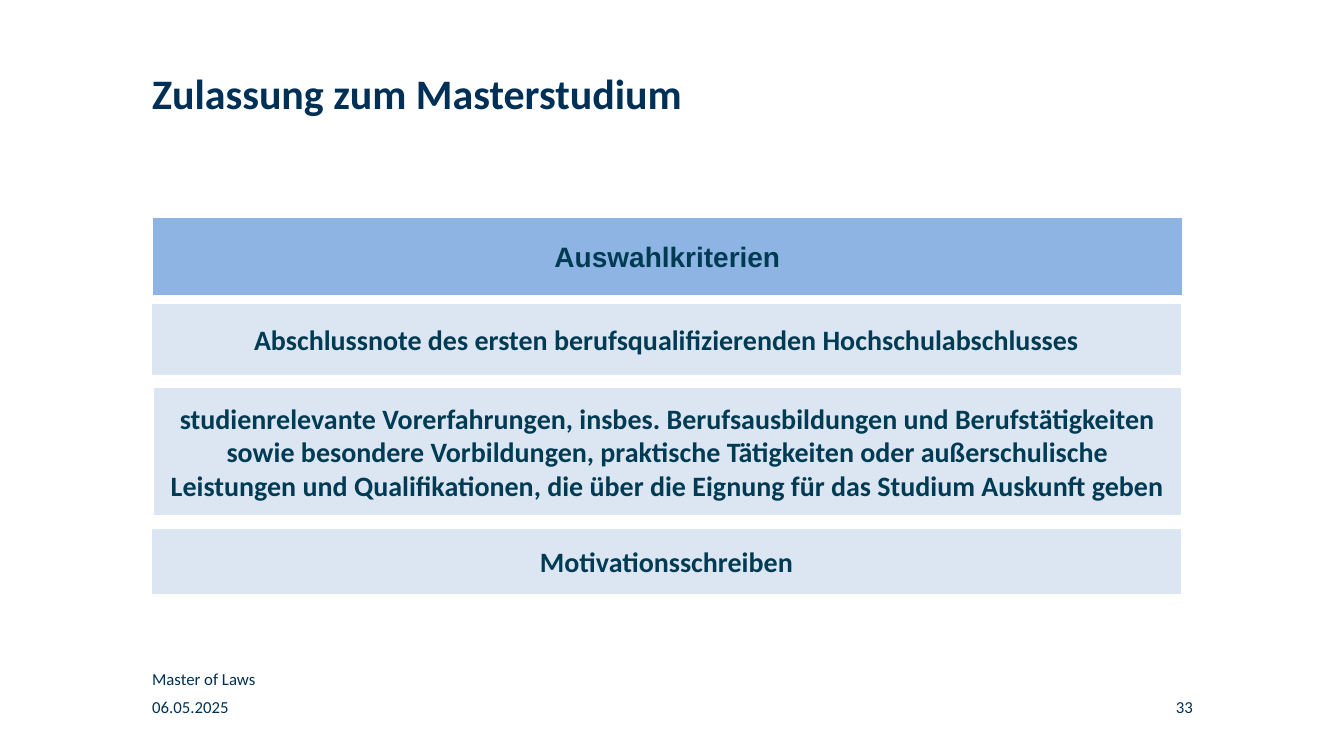
from dataclasses import dataclass

from pptx import Presentation
from pptx.dml.color import RGBColor
from pptx.enum.shapes import MSO_SHAPE
from pptx.enum.text import MSO_ANCHOR, MSO_AUTO_SIZE, PP_ALIGN
from pptx.shapes.autoshape import Shape
from pptx.slide import Slide
from pptx.util import Inches, Pt

NAVY = RGBColor(0x00, 0x30, 0x56)
PETROL = RGBColor(0x00, 0x3B, 0x53)
MID_BLUE = RGBColor(0x8E, 0xB4, 0xE3)
PALE_BLUE = RGBColor(0xDC, 0xE6, 0xF2)
WHITE = RGBColor(0xFF, 0xFF, 0xFF)

TITLE_FORMAT = {"name": "Calibri", "size": Pt(30), "bold": True}
FOOTER_FORMAT = {"name": "Calibri", "size": Pt(12), "bold": False}
BAR_FORMAT = {"name": "Calibri", "size": Pt(20), "bold": True}
HEADING_FORMAT = BAR_FORMAT | {"name": "Arial"}

PLAIN_FRAME = {
    "margin_left": 0,
    "margin_top": 0,
    "margin_right": 0,
    "margin_bottom": 0,
    "vertical_anchor": MSO_ANCHOR.TOP,
}
BAR_FRAME = {"vertical_anchor": MSO_ANCHOR.MIDDLE}


@dataclass(frozen=True)
class Box:
    left: float
    top: float
    width: float
    height: float

    def lengths(self) -> list[int]:
        return [Inches(value) for value in (self.left, self.top, self.width, self.height)]


@dataclass(frozen=True)
class FooterItem:
    text: str
    box: Box
    alignment: PP_ALIGN = PP_ALIGN.LEFT


@dataclass(frozen=True)
class Bar:
    text: str
    box: Box
    fill: RGBColor = PALE_BLUE
    is_heading: bool = False


TITLE_BOX = Box(1.51, 0.67, 7.06, 1.37)

FOOTER_ITEMS = [
    FooterItem("06.05.2025", Box(1.51, 6.91, 3.11, 0.2)),
    FooterItem("Master of Laws", Box(1.51, 6.63, 4.22, 0.2)),
    FooterItem("33", Box(10.3, 6.91, 1.54, 0.2), PP_ALIGN.RIGHT),
]

BARS = [
    Bar("Auswahlkriterien", Box(1.49, 2.14, 10.27, 0.81), MID_BLUE, True),
    Bar(
        "Abschlussnote des ersten berufsqualifizierenden Hochschulabschlusses",
        Box(1.48, 2.99, 10.27, 0.76),
    ),
    Bar(
        "studienrelevante Vorerfahrungen, insbes. Berufsausbildungen und "
        "Berufstätigkeiten sowie besondere Vorbildungen, praktische Tätigkeiten "
        "oder außerschulische Leistungen und Qualifikationen, die über die "
        "Eignung für das Studium Auskunft geben",
        Box(1.5, 3.82, 10.25, 1.32),
    ),
    Bar("Motivationsschreiben", Box(1.48, 5.22, 10.27, 0.7)),
]


def apply_format(target: object, values: dict[str, object]) -> None:
    for name, value in values.items():
        setattr(target, name, value)


def write_text(
    shape: Shape,
    text: str,
    frame_format: dict[str, object],
    font_format: dict[str, object],
    color: RGBColor,
    alignment: PP_ALIGN,
) -> None:
    text_frame = shape.text_frame
    text_frame.word_wrap = True
    text_frame.auto_size = MSO_AUTO_SIZE.NONE
    apply_format(text_frame, frame_format)
    text_frame.text = text
    paragraph = text_frame.paragraphs[0]
    paragraph.alignment = alignment
    apply_format(paragraph.font, font_format)
    paragraph.font.color.rgb = color


def format_title(slide: Slide, text: str) -> None:
    title = slide.shapes.title
    title.left, title.top, title.width, title.height = TITLE_BOX.lengths()
    write_text(title, text, PLAIN_FRAME, TITLE_FORMAT, NAVY, PP_ALIGN.LEFT)


def add_footer_item(slide: Slide, item: FooterItem) -> None:
    shape = slide.shapes.add_textbox(*item.box.lengths())
    write_text(shape, item.text, PLAIN_FRAME, FOOTER_FORMAT, NAVY, item.alignment)


def add_bar(slide: Slide, bar: Bar) -> None:
    shape = slide.shapes.add_shape(MSO_SHAPE.RECTANGLE, *bar.box.lengths())
    shape.shadow.inherit = False
    shape.fill.solid()
    shape.fill.fore_color.rgb = bar.fill
    shape.line.color.rgb = WHITE
    shape.line.width = Pt(3.82)
    font_format = HEADING_FORMAT if bar.is_heading else BAR_FORMAT
    write_text(shape, bar.text, BAR_FRAME, font_format, PETROL, PP_ALIGN.CENTER)


def main() -> None:
    presentation = Presentation()
    presentation.slide_width = Inches(13.34)
    presentation.slide_height = Inches(7.5)
    slide = presentation.slides.add_slide(presentation.slide_layouts.get_by_name("Title Only"))
    format_title(slide, "Zulassung zum Masterstudium")
    for item in FOOTER_ITEMS:
        add_footer_item(slide, item)
    for bar in BARS:
        add_bar(slide, bar)
    presentation.save("out.pptx")


if __name__ == "__main__":
    main()
